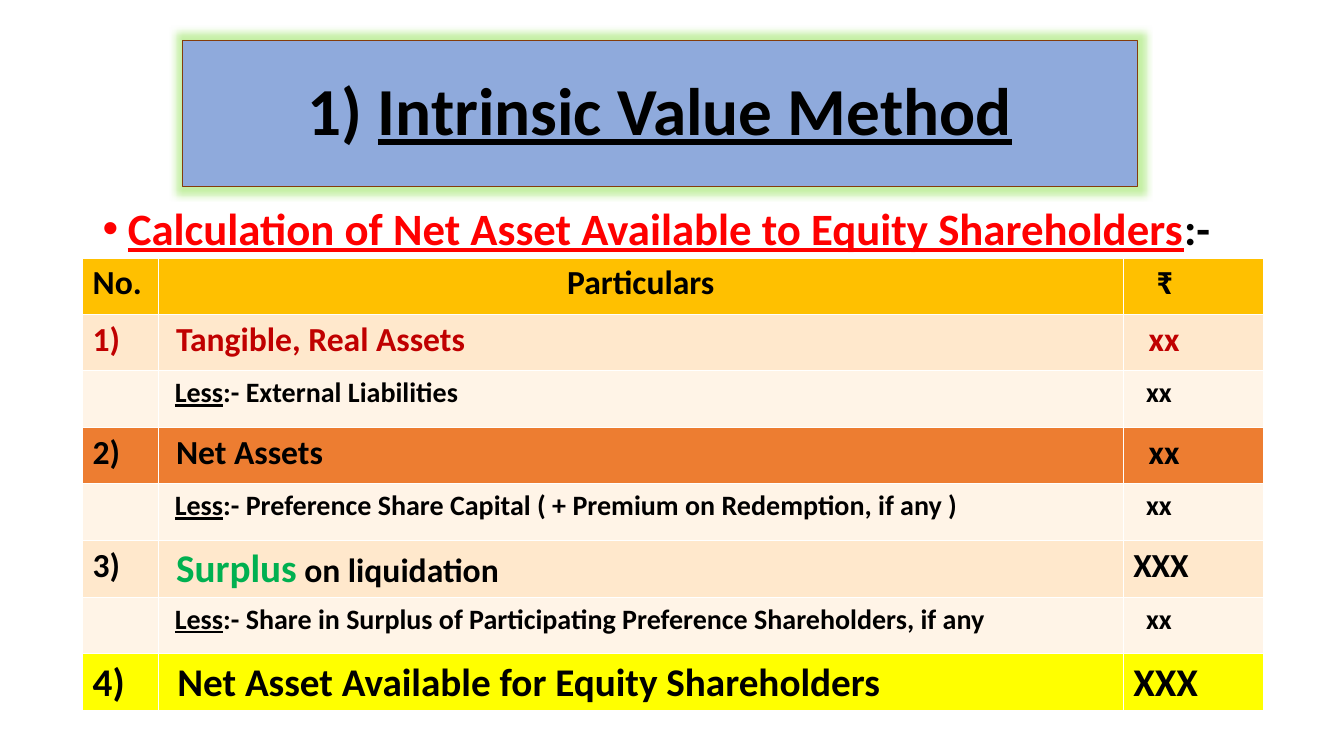
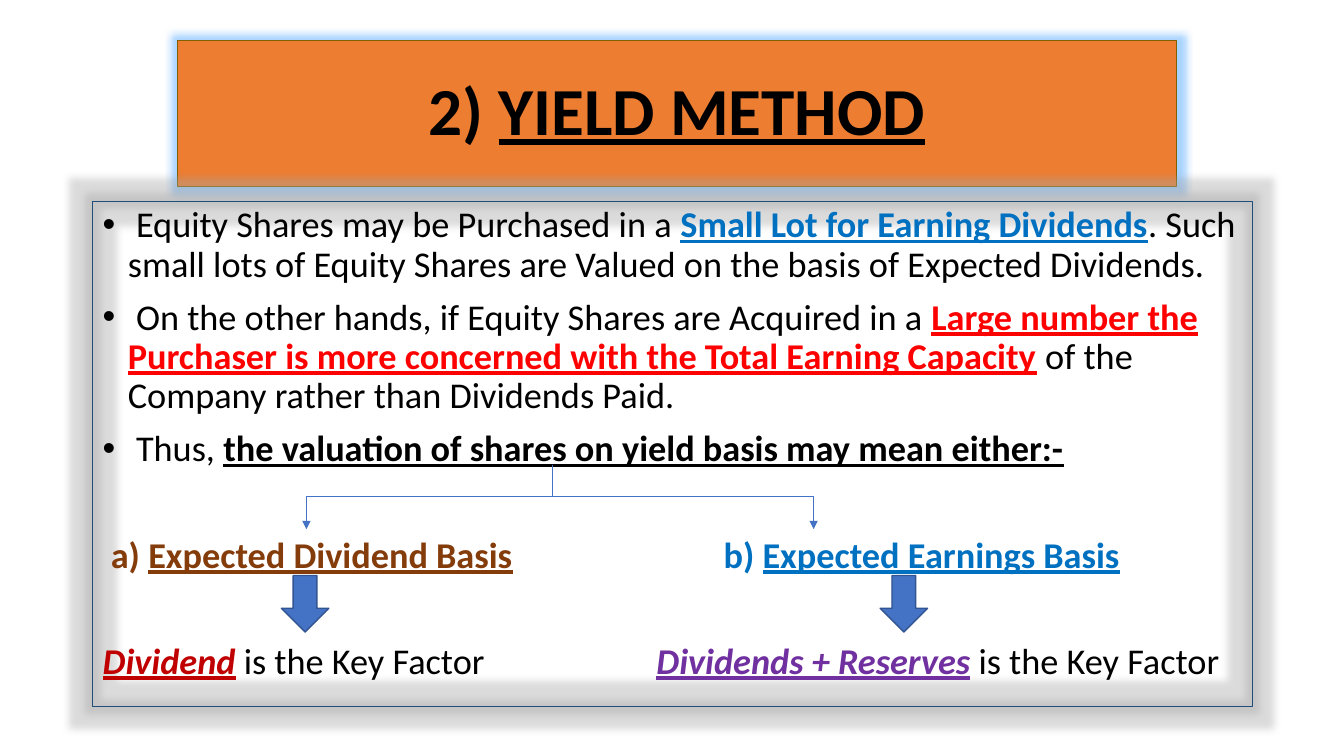
from lxml.etree import SubElement
from pptx import Presentation
from pptx.dml.color import RGBColor
from pptx.enum.shapes import MSO_CONNECTOR, MSO_SHAPE
from pptx.enum.text import MSO_ANCHOR, PP_ALIGN
from pptx.oxml.ns import qn
from pptx.util import Emu, Inches, Pt

BLACK, RED, BLUE = "000000", "FF0000", "0070C0"
CRIMSON, BROWN, PURPLE, GREEN = "C00000", "843C0B", "7030A0", "00B050"
ORANGE, GOLD, PEACH, CREAM, YELLOW = "ED7D31", "FFC000", "FFE8CC", "FFF4E7", "FFFF00"
ACCENT = "4472C4"


def hue(code):
    return RGBColor.from_string(code)


class Deck:
    """Holds the style and the current slide; places are percent of the slide."""

    font = "Calibri"

    def __init__(self):
        self.prs = Presentation()
        self.prs.slide_width, self.prs.slide_height = Inches(13.33), Inches(7.5)
        self.slide = None

    def across(self, share):
        return Emu(round(self.prs.slide_width * share / 100))

    def down(self, share):
        return Emu(round(self.prs.slide_height * share / 100))

    def area(self, left, top, width, height):
        return self.across(left), self.down(top), self.across(width), self.down(height)

    def letter(self, par, runs, size, bold=None, align=None):
        """Fill a paragraph with runs of (text, marks, colour, size); marks are b, i, u."""
        par.alignment = align
        par.font.name, par.font.size, par.font.bold = self.font, Pt(size), bold
        for words, marks, color, points in runs:
            run = par.add_run()
            run.text = words
            run.font.color.rgb = hue(color)
            if points:
                run.font.size = Pt(points)
            if "b" in marks:
                run.font.bold = True
            if "i" in marks:
                run.font.italic = True
            if "u" in marks:
                run.font.underline = True

    def paint(self, shape, fill, line, width=0.75, glow=None):
        if fill:
            shape.fill.solid()
            shape.fill.fore_color.rgb = hue(fill)
        else:
            shape.fill.background()
        shape.line.color.rgb = hue(line)
        shape.line.width = Pt(width)
        shape.shadow.inherit = False
        if glow:
            effects = shape._element.spPr.find(qn("a:effectLst"))
            halo = SubElement(effects, qn("a:glow"), rad=str(Inches(0.15)))
            tint = SubElement(halo, qn("a:srgbClr"), val=glow)
            SubElement(tint, qn("a:alpha"), val="40000")

    def start(self, number, words, left, width, fill, line, glow):
        """Start a slide with a glowing title band."""
        self.slide = self.prs.slides.add_slide(self.prs.slide_layouts[5])
        title = self.slide.shapes.title
        title.left, title.top, title.width, title.height = self.area(left, 5.33, width, 19.33)
        self.paint(title, fill, line, glow=glow)
        title.text_frame.vertical_anchor = MSO_ANCHOR.MIDDLE
        par = title.text_frame.paragraphs[0]
        par.line_spacing = 0.9
        self.letter(par, [text(number), text(words, "u")], 48, True, PP_ALIGN.CENTER)

    def body(self, height, size, items, bold=None):
        """Add a text box of (runs, space before, tab stop); no tab means a bullet."""
        box = self.slide.shapes.add_textbox(*self.area(6.9, 26.67, 86.27, height))
        frame = box.text_frame
        frame.word_wrap = True
        for index, (runs, space, tab) in enumerate(items):
            par = frame.add_paragraph() if index else frame.paragraphs[0]
            par.line_spacing, par.space_before = 0.9, Pt(space)
            props = par._p.get_or_add_pPr()
            if tab:
                stops = SubElement(props, qn("a:tabLst"))
                SubElement(stops, qn("a:tab"), pos=str(self.across(tab)), algn="l")
            else:
                props.set("marL", str(Inches(0.25)))
                props.set("indent", str(-Inches(0.25)))
                SubElement(props, qn("a:buFont"), typeface="Arial")
                SubElement(props, qn("a:buChar"), char="•")
            self.letter(par, runs, size, bold)
        return box

    def table(self, place, parts, rows):
        """Add a table of (fill, size, cells); a cell is (runs, lead spaces, align)."""
        place = self.area(*place)
        grid = self.slide.shapes.add_table(len(rows), len(parts), *place).table
        for column, part in zip(grid.columns, parts):
            column.width = round(place[2] * part / sum(parts))
        for r, (fill, size, cells) in enumerate(rows):
            for c, (runs, lead, align) in enumerate(cells):
                cell = grid.cell(r, c)
                cell.fill.solid()
                cell.fill.fore_color.rgb = hue(fill)
                cell.margin_left = Inches(0.1) + Pt(lead * size * 0.23)
                self.letter(cell.text_frame.paragraphs[0], runs, size, True, align)

    def line(self, start, end, arrow=False):
        link = self.slide.shapes.add_connector(
            MSO_CONNECTOR.STRAIGHT, self.across(start[0]), self.down(start[1]),
            self.across(end[0]), self.down(end[1]))
        link.line.color.rgb, link.line.width = hue(ACCENT), Pt(0.5)
        props = link._element.spPr
        if arrow:
            SubElement(props.find(qn("a:ln")), qn("a:tailEnd"), type="triangle")
        SubElement(props, qn("a:effectLst"))

    def arrow(self, middle, top):
        width = 3.53
        shape = self.slide.shapes.add_shape(
            MSO_SHAPE.DOWN_ARROW, *self.area(middle - width / 2, top, width, 7.47))
        self.paint(shape, ACCENT, "325491", 1)


def text(words, marks="", color=BLACK, size=None):
    return words, marks, color, size


def entry(fill, size, number, runs, value, lead, color=BLACK):
    """One table row; lead is the indent of the value in spaces."""
    return fill, size, [([text(number, "", color)] if number else [], 0, None),
                        (runs, 1, None), ([text(value, "", color)], lead, None)]


def less(words):
    return entry(CREAM, 20, "", [text("Less", "u"), text(":- " + words)], "xx", 2)


def worth(deck):
    deck.start("1) ", "Intrinsic Value Method", 13.58, 71.04, "8FAADC", BROWN, "6ED91E")
    deck.body(7.5, 32, [([text("Calculation of Net Asset Available to Equity Shareholders", "u", RED),
                          text(":-")], 10, None)], True)
    head = [([text("No.")], 0, None), ([text("Particulars")], 0, PP_ALIGN.CENTER),
            ([text("₹")], 3, None)]
    deck.table((6.15, 34.13, 87.85, 59.73), (0.75, 9.57, 1.39), [
        (GOLD, 24, head),
        entry(PEACH, 24, "1)", [text("Tangible, Real Assets", "", CRIMSON)], "xx", 2, CRIMSON),
        less("External Liabilities"),
        entry(ORANGE, 24, "2)", [text("Net Assets")], "xx", 2),
        less("Preference Share Capital ( + Premium on Redemption, if any )"),
        entry(PEACH, 24, "3)", [text("Surplus", "", GREEN, 28), text(" on liquidation")], "XXX", 0),
        less("Share in Surplus of Participating Preference Shareholders, if any"),
        entry(YELLOW, 28, "4)", [text("Net Asset Available for Equity Shareholders")], "XXX", 0),
    ])


def gains(deck):
    deck.start("2) ", "YIELD METHOD", 13.2, 74.34, ORANGE, "806000", "2591FF")
    box = deck.body(66.8, 25.9, [
        ([text(" Equity Shares may be Purchased in a "),
          text("Small Lot for Earning Dividends", "bu", BLUE),
          text(". Such small lots of Equity Shares are Valued on the basis of Expected Dividends.")],
         10, None),
        ([text(" On the other hands, if Equity Shares are Acquired in a "),
          text("Large number the Purchaser is more concerned with the Total Earning Capacity", "bu", RED),
          text(" of the Company rather than Dividends Paid.")], 10, None),
        ([text(" Thus, "),
          text("the valuation of shares on yield basis may mean either:-", "bu")], 10, None),
        ([text(" a) ", "b", BROWN), text("Expected Dividend Basis", "bu", BROWN),
          text("\t"), text("b) ", "b", BLUE), text("Expected Earnings Basis", "bu", BLUE)], 48, 46.2),
        ([text("Dividend", "biu", CRIMSON), text(" is the Key Factor\t"),
          text("Dividends + Reserves", "biu", PURPLE), text(" is the Key Factor")], 48, 41.2),
    ])
    deck.paint(box, None, "1F4E79", glow="A5A5A5")

    stem, left, right = 41.1, 22.8, 60.54
    top, fork, tip = 61.47, 65.6, 70
    deck.line((stem, top), (stem, fork))
    deck.line((left, fork), (right, fork))
    for branch in (left, right):
        deck.line((branch, fork), (branch, tip), True)
    for middle in (22.7, 67.25):
        deck.arrow(middle, 76.13)


def main():
    deck = Deck()
    worth(deck)
    gains(deck)
    deck.prs.save("out.pptx")


if __name__ == "__main__":
    main()
